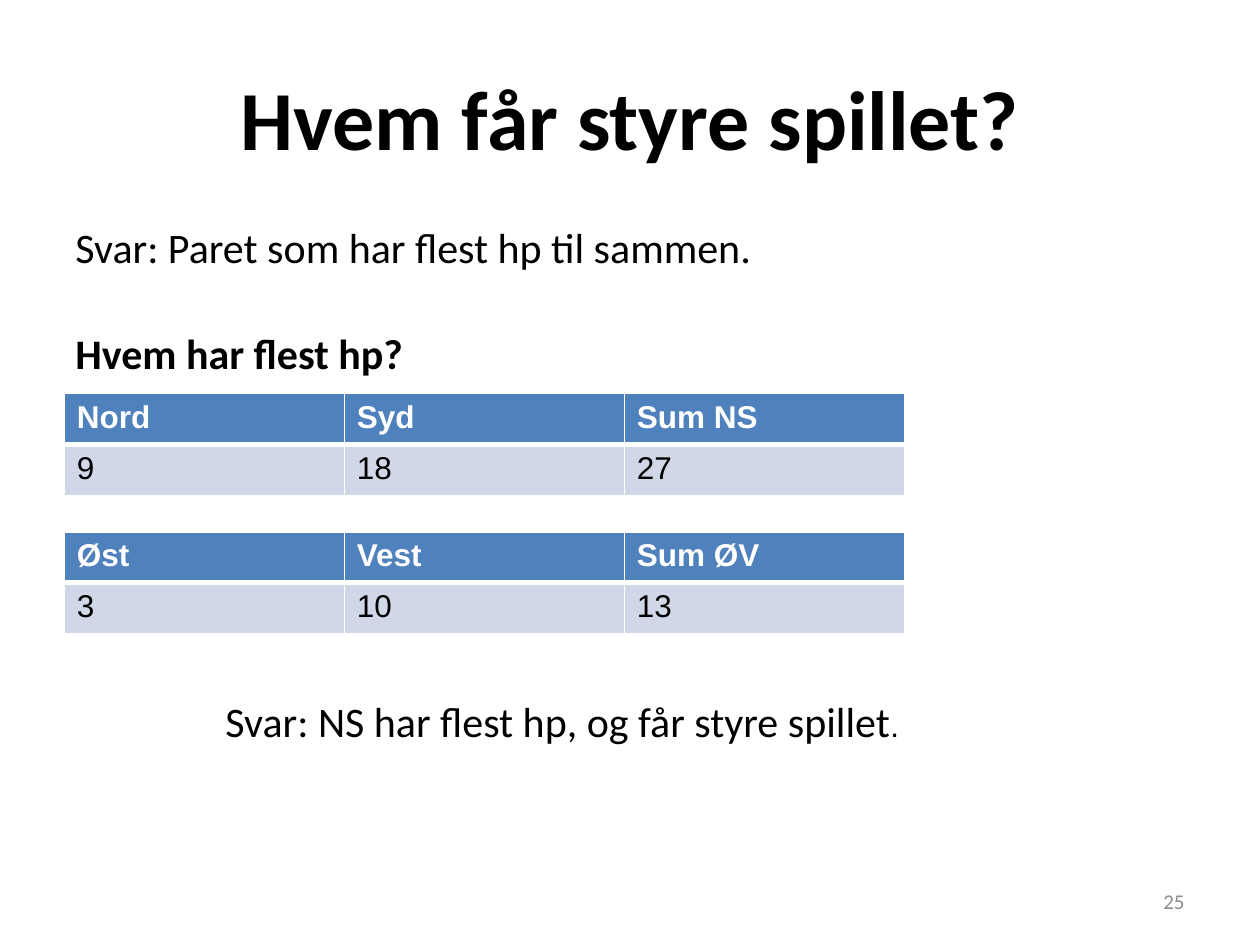
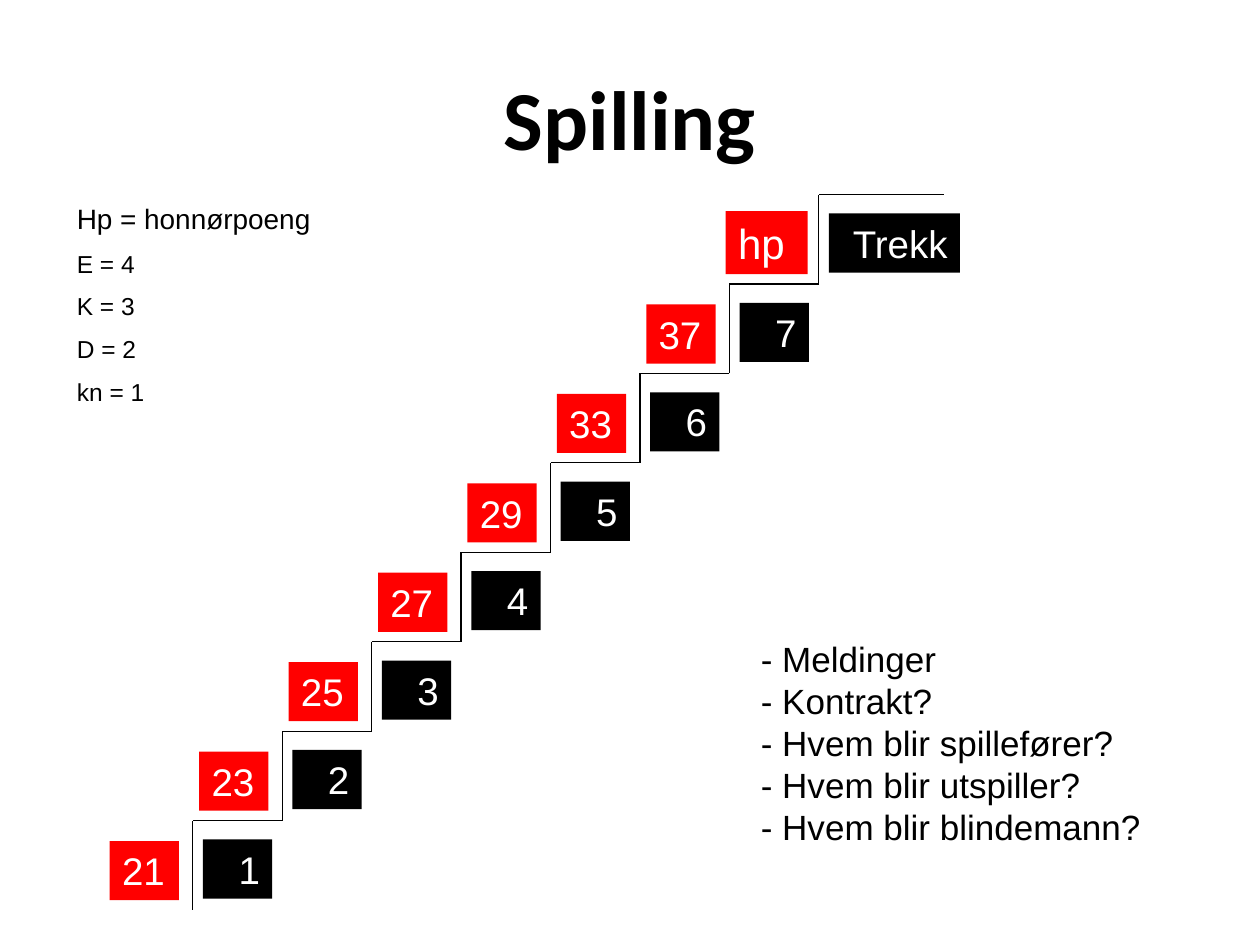
from collections import namedtuple
from dataclasses import dataclass

import lxml.etree
import pptx
import pptx.dml.color
import pptx.enum.shapes
import pptx.enum.text
import pptx.oxml
import pptx.oxml.ns
import pptx.util

Pt = pptx.util.Pt
Align = pptx.enum.text.PP_ALIGN
Anchor = pptx.enum.text.MSO_ANCHOR
Box = namedtuple("Box", "left top width height")
Step = namedtuple("Step", "points tricks points_width tricks_width points_height points_gap tread size")


@dataclass(frozen=True)
class Theme:
    heading_font: str = "Calibri"
    body_font: str = "Arial"
    black: str = "000000"
    white: str = "FFFFFF"
    red: str = "FF0000"
    grey: str = "8C8C8C"
    header_fill: str = "4F81BD"
    row_fill: str = "D0D8E8"
    title_size: float = 48
    text_size: float = 24
    step_size: float = 22
    list_size: float = 20
    table_size: float = 18
    legend_size: float = 16
    small_size: float = 14
    number_size: float = 12


THEME = Theme()
TITLE_BOX = Box(36, 21.6, 648, 90)
NUMBER_BOX = Box(516, 500.4, 168, 28.8)


def color(value):
    return pptx.dml.color.RGBColor.from_string(value)


def points(box):
    return [Pt(length) for length in box]


def add_run(paragraph, text, size, font=THEME.body_font, ink=THEME.black, bold=False):
    run = paragraph.add_run()
    run.text = text
    run.font.name = font
    run.font.size = Pt(size)
    run.font.bold = bold
    run.font.color.rgb = color(ink)


def add_text_box(slide, box):
    text_frame = slide.shapes.add_textbox(*points(box)).text_frame
    text_frame.word_wrap = True
    return text_frame


def next_paragraph(text_frame, index, space_before=0):
    """Return the first paragraph, or a new one with space above it."""
    if index == 0:
        return text_frame.paragraphs[0]
    paragraph = text_frame.add_paragraph()
    paragraph.space_before = Pt(space_before)
    return paragraph


def add_titled_slide(presentation, title):
    slide = presentation.slides.add_slide(presentation.slide_layouts[5])
    shape = slide.shapes.title
    shape.left, shape.top, shape.width, shape.height = points(TITLE_BOX)
    shape.text_frame.vertical_anchor = Anchor.MIDDLE
    paragraph = shape.text_frame.paragraphs[0]
    paragraph.alignment = Align.CENTER
    add_run(paragraph, title, THEME.title_size, THEME.heading_font, bold=True)
    return slide


def add_slide_number(slide, number):
    text_frame = add_text_box(slide, NUMBER_BOX)
    text_frame.vertical_anchor = Anchor.MIDDLE
    paragraph = text_frame.paragraphs[0]
    paragraph.alignment = Align.RIGHT
    add_run(paragraph, number, THEME.number_size, THEME.heading_font, THEME.grey)


def set_cell_borders(cell, bottom_width):
    properties = cell._tc.get_or_add_tcPr()
    widths = {"lnL": 1, "lnR": 1, "lnT": 1, "lnB": bottom_width}
    for position, (tag, width) in enumerate(widths.items()):
        line = lxml.etree.Element(pptx.oxml.ns.qn(f"a:{tag}"), w=str(Pt(width)))
        fill = lxml.etree.SubElement(line, pptx.oxml.ns.qn("a:solidFill"))
        lxml.etree.SubElement(fill, pptx.oxml.ns.qn("a:srgbClr"), val=THEME.white)
        properties.insert(position, line)


def add_points_table(slide, box, rows, row_heights):
    table = slide.shapes.add_table(len(rows), len(rows[0]), *points(box)).table
    table.horz_banding = False
    for column in table.columns:
        column.width = Pt(box.width / len(rows[0]))
    for row_index, texts in enumerate(rows):
        header = row_index == 0
        table.rows[row_index].height = Pt(row_heights[row_index])
        for column_index, text in enumerate(texts):
            cell = table.cell(row_index, column_index)
            cell.fill.solid()
            cell.fill.fore_color.rgb = color(THEME.header_fill if header else THEME.row_fill)
            set_cell_borders(cell, 3 if header else 1)
            add_run(cell.text_frame.paragraphs[0], text, THEME.table_size,
                    ink=THEME.white if header else THEME.black, bold=header)


def add_question(slide, box):
    text_frame = add_text_box(slide, box)
    lines = [("Svar: Paret som har flest hp til sammen.", False), ("Hvem har flest hp?", True)]
    for index, (text, bold) in enumerate(lines):
        paragraph = next_paragraph(text_frame, index, 34.8)
        paragraph.line_spacing = 0.9
        add_run(paragraph, text, THEME.text_size, THEME.heading_font, bold=bold)


def add_answer(slide, box):
    paragraph = add_text_box(slide, box).paragraphs[0]
    add_run(paragraph, "Svar: NS har flest hp, og får styre spillet", THEME.text_size, THEME.heading_font)
    add_run(paragraph, ".", THEME.table_size)


def add_line(slide, start, end):
    connector = slide.shapes.add_connector(
        pptx.enum.shapes.MSO_CONNECTOR.STRAIGHT, *points(start + end))
    connector.line.color.rgb = color(THEME.black)
    connector.line.width = Pt(0.75)
    lxml.etree.SubElement(connector._element.spPr, pptx.oxml.ns.qn("a:effectLst"))


def add_label(slide, box, text, fill, size, alignment):
    shape = slide.shapes.add_shape(pptx.enum.shapes.MSO_SHAPE.RECTANGLE, *points(box))
    shape.shadow.inherit = False
    shape.fill.solid()
    shape.fill.fore_color.rgb = color(fill)
    shape.line.fill.background()
    shape.text_frame.vertical_anchor = Anchor.TOP
    paragraph = shape.text_frame.paragraphs[0]
    paragraph.alignment = alignment
    add_run(paragraph, text, size, ink=THEME.white)


def add_staircase(slide, box, steps):
    """Climb from the lower left of the box, points left and tricks right of each riser."""
    rise = box.height / len(steps)
    for index, step in enumerate(steps):
        riser = box.left + index * rise
        bottom = box.top + box.height - index * rise
        points_box = Box(riser - step.points_gap - step.points_width,
                         bottom - 5.6 - step.points_height, step.points_width, step.points_height)
        add_label(slide, points_box, step.points, THEME.red, step.size, Align.LEFT)
        add_label(slide, Box(riser + 5.8, bottom - 40.3, step.tricks_width, 33.8),
                  step.tricks, THEME.black, THEME.step_size, Align.RIGHT)
        corner = (riser, bottom - rise)
        add_line(slide, (riser, bottom), corner)
        add_line(slide, corner, (riser + step.tread, bottom - rise))


def add_legend(slide, box):
    text_frame = add_text_box(slide, box)
    for index, text in enumerate(["Hp = honnørpoeng", "E = 4", "K = 3", "D = 2", "kn = 1"]):
        size = THEME.small_size if index else THEME.legend_size
        add_run(next_paragraph(text_frame, index, 7.7), text, size)


def add_topics(slide, box):
    text_frame = add_text_box(slide, box)
    topics = ["Meldinger", "Kontrakt?", "Hvem blir spillefører?",
              "Hvem blir utspiller?", "Hvem blir blindemann?"]
    for index, topic in enumerate(topics):
        add_run(next_paragraph(text_frame, index), f"- {topic}", THEME.list_size)


def build_declarer_slide(presentation):
    slide = add_titled_slide(presentation, "Hvem får styre spillet?")
    add_question(slide, Box(36, 126, 648, 356.4))
    add_slide_number(slide, "25")
    add_points_table(slide, Box(36.8, 224.8, 480, 58.4),
                     [["Nord", "Syd", "Sum NS"], ["9", "18", "27"]], [29.2, 29.2])
    add_points_table(slide, Box(36.8, 304, 480, 56.4),
                     [["Øst", "Vest", "Sum ØV"], ["3", "10", "13"]], [27.2, 29.2])
    add_answer(slide, Box(121.7, 393.8, 527, 36))


def build_play_slide(presentation):
    slide = add_titled_slide(presentation, "Spilling")
    hand_points = ["21", "23", "25", "27", "29", "33", "37"]
    steps = [Step(text, str(tricks), 39.6, 39.6, 33.8, 7.9, 51.1, THEME.step_size)
             for tricks, text in enumerate(hand_points, 1)]
    steps.append(Step("hp", "Trekk", 46.8, 74.9, 36, 6.4, 71.3, THEME.text_size))
    add_staircase(slide, Box(110.2, 111.2, 429, 408.8), steps)
    add_legend(slide, Box(36.8, 111.6, 181.4, 126.7))
    add_topics(slide, Box(427.7, 360.7, 249.8, 127.4))


def main():
    presentation = pptx.Presentation()
    presentation.slide_width, presentation.slide_height = Pt(720), Pt(540)
    build_declarer_slide(presentation)
    build_play_slide(presentation)
    presentation.save("out.pptx")


if __name__ == "__main__":
    main()
